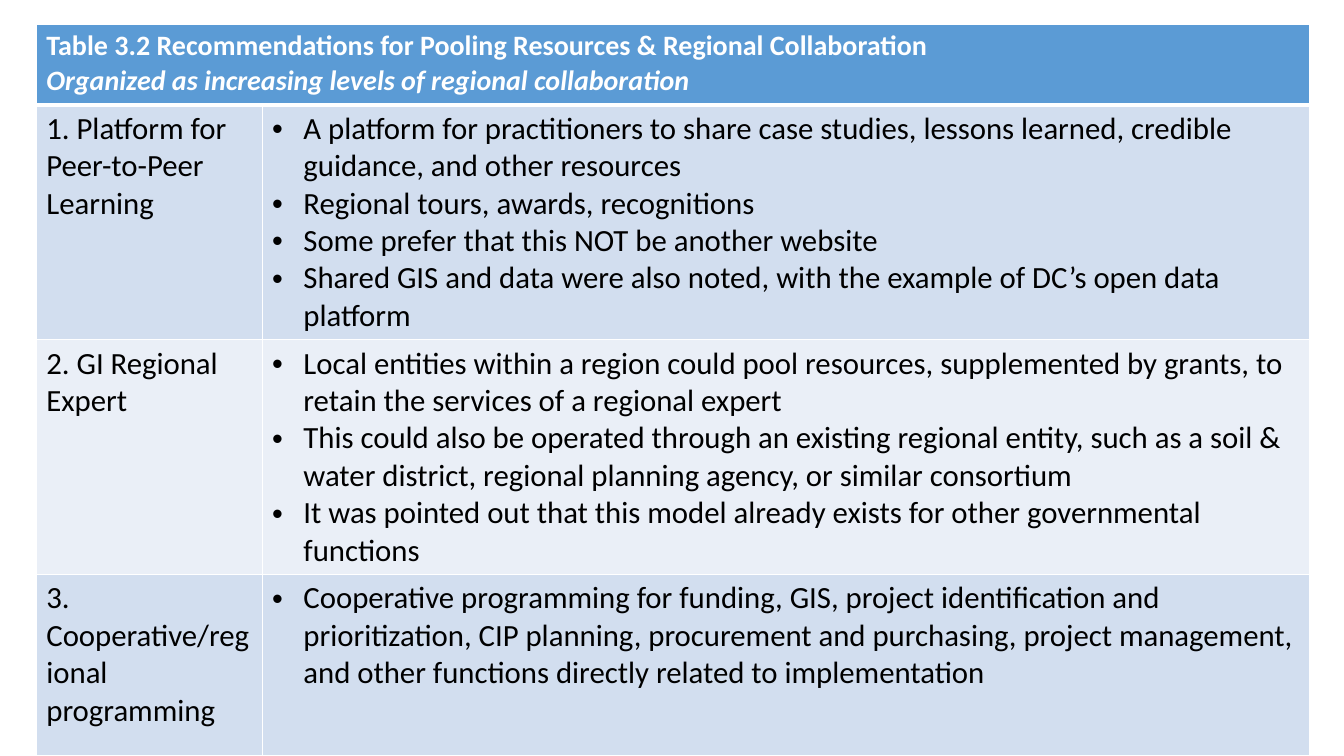
from lxml.etree import SubElement
from pptx import Presentation
from pptx.dml.color import RGBColor
from pptx.oxml.ns import qn
from pptx.util import Inches, Pt

WHITE = RGBColor(0xFF, 0xFF, 0xFF)
BLACK = RGBColor(0x00, 0x00, 0x00)
HEADER_BLUE = RGBColor(0x5B, 0x9B, 0xD5)
BAND_DARK = RGBColor(0xD2, 0xDE, 0xEF)
BAND_LIGHT = RGBColor(0xEA, 0xEF, 0xF7)

FONT = "Calibri"
INDENT = Inches(0.31)
COLUMN_WIDTHS = [2.24, 10.39]
ROW_HEIGHTS = [0.8, 2.33, 2.33, 1.8]

HEADINGS = [
    "Table 3.2 Recommendations for Pooling Resources & Regional Collaboration",
    "Organized as increasing levels of regional collaboration",
]
RECOMMENDATIONS = [
    ("1. Platform for Peer-to-Peer Learning", [
        "A platform for practitioners to share case studies, lessons learned, "
        "credible guidance, and other resources",
        "Regional tours, awards, recognitions",
        "Some prefer that this NOT be another website",
        "Shared GIS and data were also noted, with the example of DC’s open "
        "data platform",
    ]),
    ("2. GI Regional Expert", [
        "Local entities within a region could pool resources, supplemented by "
        "grants, to retain the services of a regional expert",
        "This could also be operated through an existing regional entity, such "
        "as a soil & water district, regional planning agency, or similar "
        "consortium",
        "It was pointed out that this model already exists for other "
        "governmental functions",
    ]),
    ("3. Cooperative/regional programming", [
        "Cooperative programming for funding, GIS, project identification and "
        "prioritization, CIP planning, procurement and purchasing, project "
        "management, and other functions directly related to implementation",
    ]),
]


def add_bullet(para):
    """Give a paragraph a round bullet with a hanging indent."""
    properties = para._p.get_or_add_pPr()
    properties.set("marL", str(INDENT))
    properties.set("indent", str(-INDENT))
    SubElement(properties, qn("a:buFont")).set("typeface", "Arial")
    SubElement(properties, qn("a:buChar")).set("char", "•")


def set_borders(cell, top=1, bottom=1):
    """Draw white cell borders; the lines stand before the fill."""
    properties = cell._tc.get_or_add_tcPr()
    widths = {"lnL": 1, "lnR": 1, "lnT": top, "lnB": bottom}
    for position, (side, width) in enumerate(widths.items()):
        line = SubElement(properties, qn(f"a:{side}"), w=str(Pt(width)))
        fill = SubElement(line, qn("a:solidFill"))
        SubElement(fill, qn("a:srgbClr")).set("val", str(WHITE))
        properties.insert(position, line)


def fill_cell(cell, color):
    cell.fill.solid()
    cell.fill.fore_color.rgb = color


def write_cell(cell, lines, size, color, bold=False, bulleted=False):
    frame = cell.text_frame
    for index, line in enumerate(lines):
        para = frame.paragraphs[0] if index == 0 else frame.add_paragraph()
        para.text = line
        para.font.name = FONT
        para.font.size = Pt(size)
        para.font.bold = bold
        para.font.color.rgb = color
        if bulleted:
            add_bullet(para)


def add_recommendation_table(page):
    frame = page.shapes.add_table(
        len(ROW_HEIGHTS), len(COLUMN_WIDTHS), Inches(0.36), Inches(0.24),
        Inches(sum(COLUMN_WIDTHS)), Inches(sum(ROW_HEIGHTS)))
    table = frame.table
    for column, width in zip(table.columns, COLUMN_WIDTHS):
        column.width = Inches(width)
    for row, height in zip(table.rows, ROW_HEIGHTS):
        row.height = Inches(height)
    return table


def main():
    deck = Presentation()
    deck.slide_width = Inches(13.33)
    deck.slide_height = Inches(7.5)
    page = deck.slides.add_slide(deck.slide_layouts[6])
    table = add_recommendation_table(page)

    # Header across both columns
    header = table.cell(0, 0)
    header.merge(table.cell(0, 1))
    write_cell(header, HEADINGS, 20, WHITE, bold=True)
    header.text_frame.paragraphs[1].font.italic = True
    for cell in table.rows[0].cells:
        fill_cell(cell, HEADER_BLUE)
        set_borders(cell, bottom=3)

    # Banded recommendation rows
    for number, (level, points) in enumerate(RECOMMENDATIONS, start=1):
        label, details = table.rows[number].cells
        write_cell(label, [level], 22, BLACK)
        write_cell(details, points, 22, BLACK, bulleted=True)
        for cell in (label, details):
            fill_cell(cell, BAND_DARK if number % 2 else BAND_LIGHT)
            set_borders(cell, top=3 if number == 1 else 1)

    deck.save("out.pptx")


if __name__ == "__main__":
    main()
